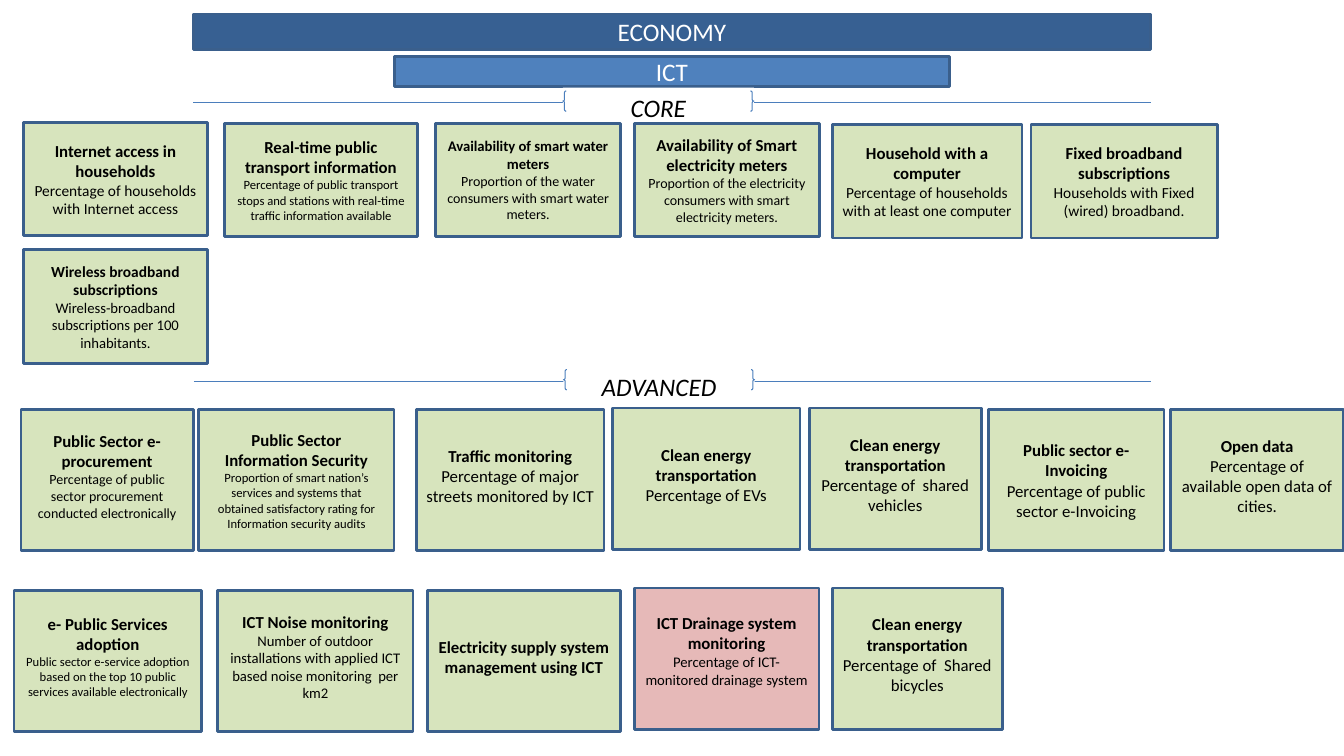
from pptx import Presentation
from pptx.dml.color import RGBColor
from pptx.enum.shapes import MSO_CONNECTOR, MSO_SHAPE
from pptx.enum.text import MSO_ANCHOR, MSO_AUTO_SIZE, PP_ALIGN
from pptx.oxml.ns import qn
from pptx.util import Pt

RECTANGLE = MSO_SHAPE.RECTANGLE
BRACES = MSO_SHAPE.DOUBLE_BRACE
STRAIGHT = MSO_CONNECTOR.STRAIGHT
MIDDLE = MSO_ANCHOR.MIDDLE
CENTER = PP_ALIGN.CENTER

COLORS = {
    "dimension": "376092",
    "category": "4F81BD",
    "border": "3A5F8C",
    "rule": "4B7EBC",
    "green": "D7E4BD",
    "red": "E6B9B8",
    "white": "FFFFFF",
    "black": "000000",
}

# Each indicator: left, top, width, title, title size, description,
# description size, extra room below the text
CORE_FIRST = [
    (16.5, 87.5, 132, "Internet access in households", 12,
     "Percentage of households with Internet access", 11, 0),
    (160.5, 88, 137.5, "Real-time public transport information", 12,
     "Percentage of public transport stops and stations with real-time "
     "traffic information available", 9, 0),
    (311, 88, 132.5, "Availability of smart water meters", 10.5,
     "Proportion of the water consumers with smart water meters.", 10, 0),
    (453, 88, 132.5, "Availability of Smart electricity meters", 12,
     "Proportion of the electricity consumers with smart electricity meters.",
     10, 0),
    (594.5, 89, 135.5, "Household with a computer", 12,
     "Percentage of households with at least one computer", 11, 0),
    (736.5, 89, 133, "Fixed broadband subscriptions", 12,
     "Households with Fixed (wired) broadband.", 11, 0),
]
CORE_SECOND = [
    (16.5, 178.5, 132, "Wireless broadband subscriptions", 11,
     "Wireless-broadband subscriptions per 100 inhabitants.", 10.5, 0),
]
ADVANCED_FIRST = [
    (15, 292.5, 123, "Public Sector e-procurement", 12,
     "Percentage of public sector procurement conducted electronically", 10, 6),
    (142, 292.5, 139.5, "Public Sector Information Security", 12,
     "Proportion of smart nation’s services and systems that obtained "
     "satisfactory rating for Information security audits", 9, 0),
    (297.5, 292.5, 134, "Traffic monitoring", 12,
     "Percentage of major streets monitored by ICT", 12, 6),
    (437.5, 291.5, 134, "Clean energy transportation", 12,
     "Percentage of EVs", 12, 6),
    (578, 291.5, 123, "Clean energy transportation", 12,
     "Percentage of  shared vehicles", 12, 6),
    (706, 292.5, 125.5, "Public sector e-Invoicing", 12,
     "Percentage of public sector e-Invoicing", 12, 0),
    (836, 292.5, 124, "Open data", 12,
     "Percentage of available open data of cities.", 12, 6),
]
ADVANCED_SECOND = [
    (10, 421.5, 134, "e- Public Services adoption", 12,
     "Public sector e-service adoption based on the top 10 public services "
     "available electronically", 9, 6),
    (155.5, 421.5, 139.5, "ICT Noise monitoring", 12,
     "Number of outdoor installations with applied ICT based noise "
     "monitoring  per km2", 10.5, 6),
    (305.5, 421.5, 137.5, "Electricity supply system management using ICT", 12,
     "", 12, 6),
    (453, 420, 132, "ICT Drainage system monitoring", 12,
     "Percentage of ICT-monitored drainage system", 10.5, 12),
    (594.5, 420, 121.5, "Clean energy transportation", 12,
     "Percentage of  Shared bicycles", 12, 6),
]
# Row height and its indicators
ROWS = [(81, CORE_FIRST), (81, CORE_SECOND),
        (101, ADVANCED_FIRST), (101, ADVANCED_SECOND)]
RED_INDICATOR = "ICT Drainage system monitoring"


def rgb(name):
    return RGBColor.from_string(COLORS[name])


def paint(shape, fill):
    shape.fill.solid()
    shape.fill.fore_color.rgb = rgb(fill)
    shape.line.color.rgb = rgb("border")
    shape.line.width = Pt(2)


def write(paragraph, text, size, color="black", bold=False, italic=False):
    paragraph.text = text
    paragraph.alignment = CENTER
    font = paragraph.font
    font.name = "Calibri"
    font.size = Pt(size)
    font.bold = bold
    font.italic = italic
    font.color.rgb = rgb(color)


def add_box(slide, left, top, width, height, fill):
    box = slide.shapes.add_shape(RECTANGLE, Pt(left), Pt(top), Pt(width), Pt(height))
    box.shadow.inherit = False
    paint(box, fill)
    box.text_frame.word_wrap = True
    box.text_frame.vertical_anchor = MIDDLE
    return box


def fill_title(slide, text):
    title = slide.shapes.title
    title.left, title.top, title.width, title.height = Pt(138), Pt(10), Pt(684), Pt(25.5)
    paint(title, "dimension")
    frame = title.text_frame
    frame.auto_size = MSO_AUTO_SIZE.NONE
    frame.vertical_anchor = MIDDLE
    write(frame.paragraphs[0], text, 18, "white")


def add_divider(slide, name, left, y):
    """A rule, broken by a section name between braces."""
    rule = slide.shapes.add_connector(STRAIGHT, Pt(left), Pt(y), Pt(left + 684), Pt(y))
    rule.line.color.rgb = rgb("rule")
    rule.line.width = Pt(0.75)
    properties = rule.line._get_or_add_ln().getparent()
    properties.append(properties.makeelement(qn("a:effectLst"), {}))

    label_left = left + 264
    label = slide.shapes.add_textbox(Pt(label_left), Pt(y - 11), Pt(136.5), Pt(29))
    label.fill.solid()
    label.fill.fore_color.rgb = rgb("white")
    label.text_frame.word_wrap = True
    write(label.text_frame.paragraphs[0], name, 18, italic=True)

    braces = slide.shapes.add_shape(
        BRACES, Pt(label_left), Pt(y - 8.5), Pt(136.5), Pt(14.5))
    braces.shadow.inherit = False
    braces.fill.background()
    braces.line.color.rgb = rgb("rule")
    braces.line.width = Pt(0.75)


def add_indicator(slide, height, left, top, width, title, title_size,
                  description, description_size, room_below):
    fill = "red" if title == RED_INDICATOR else "green"
    frame = add_box(slide, left, top, width, height, fill).text_frame
    frame.margin_bottom = Pt(3.6 + room_below)
    write(frame.paragraphs[0], title, title_size, bold=True)
    if description:
        write(frame.add_paragraph(), description, description_size)


def main():
    presentation = Presentation()
    presentation.slide_width, presentation.slide_height = Pt(960), Pt(540)
    slide = presentation.slides.add_slide(presentation.slide_layouts[5])

    # Dimension and category
    fill_title(slide, "ECONOMY")
    category = add_box(slide, 282, 40.5, 396, 21.5, "category")
    write(category.text_frame.paragraphs[0], "ICT", 18, "white")

    # Section dividers
    add_divider(slide, "CORE", 138, 73.5)
    add_divider(slide, "ADVANCED", 138.5, 272.5)

    # Indicators
    for height, indicators in ROWS:
        for indicator in indicators:
            add_indicator(slide, height, *indicator)

    presentation.save("out.pptx")


if __name__ == "__main__":
    main()
